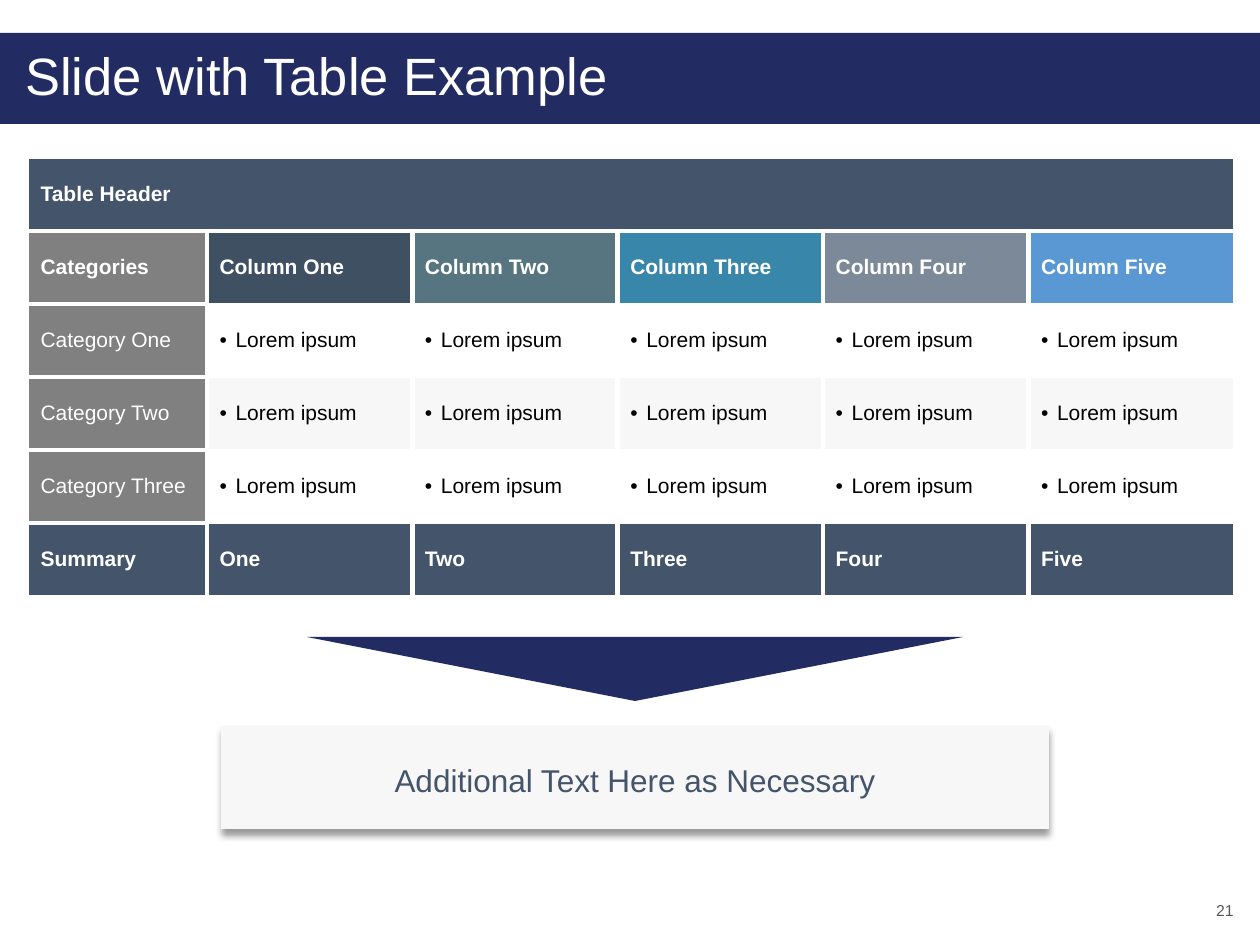
from lxml import etree
from pptx import Presentation
from pptx import util as u
from pptx.dml.color import RGBColor
from pptx.enum import shapes, text
from pptx.oxml import parse_xml
from pptx.oxml.ns import nsdecls, qn

# Content
TITLE = "Slide with Table Example"
TABLE_HEADER = "Table Header"
COLUMNS = ["Categories", "Column One", "Column Two", "Column Three", "Column Four", "Column Five"]
CATEGORIES = ["Category One", "Category Two", "Category Three"]
ENTRY = "Lorem ipsum"
SUMMARY = ["Summary", "One", "Two", "Three", "Four", "Five"]
CALLOUT = "Additional Text Here as Necessary"
PAGE_NUMBER = "21"

# Colours
WHITE = RGBColor(0xFF, 0xFF, 0xFF)
BLACK = RGBColor(0x00, 0x00, 0x00)
NAVY = RGBColor(0x22, 0x2B, 0x62)
SLATE = RGBColor(0x44, 0x54, 0x6A)
GREY = RGBColor(0x80, 0x80, 0x80)
PALE = RGBColor(0xF7, 0xF7, 0xF7)
NUMBER_GREY = RGBColor(0x59, 0x59, 0x59)
COLUMN_FILLS = [GREY, RGBColor(0x3E, 0x50, 0x62), RGBColor(0x56, 0x75, 0x81),
                RGBColor(0x39, 0x86, 0xAB), RGBColor(0x7B, 0x89, 0x99),
                RGBColor(0x59, 0x98, 0xD2)]

FONT = "Arial"
EMU_PER_PX = 914400 / 126
THIN, THICK = 1, 3


def px(length):
    return u.Emu(round(length * EMU_PER_PX))


def write(frame, words, size=12, color=WHITE, bold=False, align=text.PP_ALIGN.LEFT,
          spacing=None, bullet=False):
    paragraph = frame.paragraphs[0]
    paragraph.alignment = align
    if spacing:
        paragraph.line_spacing = spacing
    if bullet:
        properties = paragraph._p.get_or_add_pPr()
        properties.set("marL", str(px(16)))
        properties.set("indent", str(-px(16)))
        etree.SubElement(properties, qn("a:buFont")).set("typeface", FONT)
        etree.SubElement(properties, qn("a:buChar")).set("char", "•")
    run = paragraph.add_run()
    run.text = words
    run.font.name, run.font.size, run.font.bold = FONT, u.Pt(size), bold
    run.font.color.rgb = color


def add_text(parent, box, words, anchor=text.MSO_ANCHOR.TOP, **style):
    frame = parent.add_textbox(*map(px, box)).text_frame
    frame.word_wrap = True
    frame.vertical_anchor = anchor
    write(frame, words, **style)


def add_block(parent, kind, box, fill):
    block = parent.add_shape(kind, *map(px, box))
    block.shadow.inherit = False
    block.fill.solid()
    block.fill.fore_color.rgb = fill
    block.line.fill.background()
    return block


def set_borders(cell, **widths):
    properties = cell._tc.get_or_add_tcPr()
    for position, (side, width) in enumerate(widths.items()):
        properties.insert(position, parse_xml(
            f'<a:ln{side} {nsdecls("a")} w="{u.Pt(width)}"><a:solidFill>'
            f'<a:srgbClr val="{WHITE}"/></a:solidFill></a:ln{side}>'))


def fill_cell(cell, words, fill, **style):
    cell.fill.solid()
    cell.fill.fore_color.rgb = fill
    cell.vertical_anchor = text.MSO_ANCHOR.MIDDLE
    write(cell.text_frame, words, **style)


def add_table(parent, left, top, width, first_width, row_height):
    rows, cols = len(CATEGORIES) + 3, len(COLUMNS)
    table = parent.add_table(rows, cols, px(left), px(top), px(width),
                             px(row_height * rows)).table
    for c, column in enumerate(table.columns):
        column.width = px((width - first_width) / (cols - 1) if c else first_width)
    for row in table.rows:
        row.height = px(row_height)

    # Merged header
    table.cell(0, 0).merge(table.cell(0, cols - 1))
    fill_cell(table.cell(0, 0), TABLE_HEADER, SLATE, bold=True)
    set_borders(table.cell(0, 0), L=THIN, R=THIN, T=THIN, B=THICK)

    # Column heads, categories and summary
    for c in range(cols):
        fill_cell(table.cell(1, c), COLUMNS[c], COLUMN_FILLS[c], bold=True)
        for r, category in enumerate(CATEGORIES, start=2):
            if c == 0:
                fill_cell(table.cell(r, c), category, GREY)
            else:
                fill_cell(table.cell(r, c), ENTRY, PALE if r % 2 else WHITE,
                          color=BLACK, bullet=True)
        fill_cell(table.cell(rows - 1, c), SUMMARY[c], SLATE, bold=True)
        for r in range(1, rows):
            set_borders(table.cell(r, c),
                        L=THICK if c else THIN,
                        R=THICK if c < cols - 1 else THIN,
                        T=THICK if r == 1 or c == 0 else THIN,
                        B=THICK if c == 0 and r < rows - 1 else THIN)


def main():
    deck = Presentation()
    deck.slide_width, deck.slide_height = px(1260), px(945)
    slide = deck.slides.add_slide(deck.slide_layouts[6])
    parts = slide.shapes

    # Title band
    add_block(parts, shapes.MSO_SHAPE.RECTANGLE, (0, 33, 1260, 91), NAVY)
    add_text(parts, (13, 33, 1221, 91), TITLE, anchor=text.MSO_ANCHOR.MIDDLE,
             size=30, spacing=0.9)

    add_table(parts, left=28, top=158, width=1206, first_width=179, row_height=73)

    # Arrow pointing down to the callout
    arrow = add_block(parts, shapes.MSO_SHAPE.ISOSCELES_TRIANGLE, (307, 637, 656, 64), NAVY)
    arrow.rotation = 180

    # Callout with a soft shadow
    callout = parts.add_group_shape().shapes
    panel = add_block(callout, shapes.MSO_SHAPE.RECTANGLE, (221, 726, 828, 103), PALE)
    effects = panel._element.spPr.find(qn("a:effectLst"))
    effects.append(parse_xml(
        f'<a:outerShdw {nsdecls("a")} blurRad="{u.Pt(4)}" dist="{u.Pt(3)}" dir="5400000" '
        'algn="t" rotWithShape="0"><a:srgbClr val="000000"><a:alpha val="40000"/>'
        '</a:srgbClr></a:outerShdw>'))
    add_text(callout, (358, 755, 554, 42), CALLOUT, size=18, color=SLATE,
             align=text.PP_ALIGN.CENTER)

    # Page number
    add_text(parts, (1172, 900, 74, 26), PAGE_NUMBER, anchor=text.MSO_ANCHOR.BOTTOM,
             size=9, color=NUMBER_GREY, align=text.PP_ALIGN.RIGHT)

    deck.save("out.pptx")


if __name__ == "__main__":
    main()
